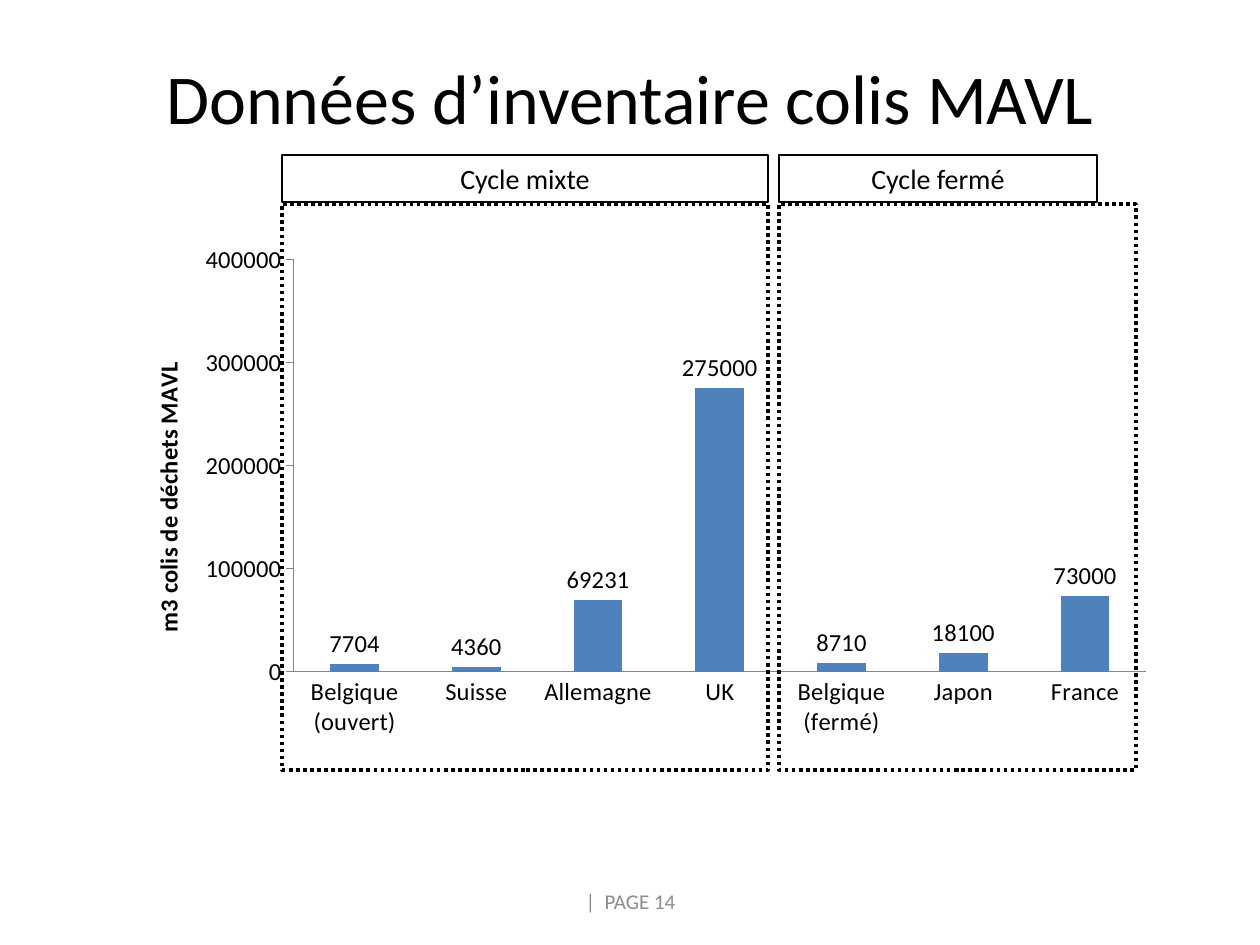
from dataclasses import dataclass

from lxml.etree import SubElement
from pptx import Presentation
from pptx.chart.data import CategoryChartData
from pptx.dml.color import RGBColor
from pptx.enum.chart import XL_CHART_TYPE as ChartType
from pptx.enum.chart import XL_LABEL_POSITION as LabelPosition
from pptx.enum.chart import XL_TICK_MARK as TickMark
from pptx.enum.dml import MSO_LINE_DASH_STYLE as Dash
from pptx.enum.shapes import MSO_SHAPE as Preset
from pptx.enum.text import MSO_ANCHOR as Anchor
from pptx.enum.text import PP_ALIGN as Align
from pptx.oxml.ns import qn
from pptx.util import Pt

PX_PER_INCH = 126
FONT = "Calibri"
BLACK = RGBColor(0x00, 0x00, 0x00)
GREY = RGBColor(0x8C, 0x8C, 0x8C)
AXIS_GREY = RGBColor(0x86, 0x86, 0x86)
BLUE = RGBColor(0x4F, 0x81, 0xBD)

VOLUMES = {
    "Belgique (ouvert)": 7704,
    "Suisse": 4360,
    "Allemagne": 69231,
    "UK": 275000,
    "Belgique (fermé)": 8710,
    "Japon": 18100,
    "France": 73000,
}


@dataclass
class Box:
    left: int
    top: int
    width: int
    height: int

    def emu(self) -> list[int]:
        return [px(n) for n in (self.left, self.top, self.width, self.height)]


@dataclass
class Cycle:
    name: str
    left: int
    header_width: int
    frame_width: int


CYCLES = [
    Cycle("Cycle mixte", 282, 486, 486),
    Cycle("Cycle fermé", 779, 318, 357),
]


def px(length: int) -> int:
    return round(length * 914400 / PX_PER_INCH)


def write(frame, text: str, size: int, color: RGBColor) -> None:
    frame.word_wrap = True
    frame.vertical_anchor = Anchor.MIDDLE
    para = frame.paragraphs[0]
    para.text = text
    para.alignment = Align.CENTER
    style(para.font, size, color)


def style(font, size: int, color: RGBColor) -> None:
    font.name = FONT
    font.size = Pt(size)
    font.color.rgb = color


def add_text(page, box: Box, text: str, size: int, color: RGBColor) -> None:
    write(page.shapes.add_textbox(*box.emu()).text_frame, text, size, color)


def add_outline(page, box: Box, width: float, dash: Dash = Dash.SOLID):
    outline = page.shapes.add_shape(Preset.RECTANGLE, *box.emu())
    outline.shadow.inherit = False
    outline.fill.background()
    outline.line.color.rgb = BLACK
    outline.line.width = Pt(width)
    outline.line.dash_style = dash
    return outline


def add_cycle(page, cycle: Cycle) -> None:
    header = add_outline(page, Box(cycle.left, 155, cycle.header_width, 47), 0.75)
    write(header.text_frame, cycle.name, 16, BLACK)
    add_outline(page, Box(cycle.left, 204, cycle.frame_width, 566), 2, Dash.ROUND_DOT)


def set_layout(parent, index: int, **settings) -> None:
    """Place a chart part by fractions of the chart's size."""
    for old in parent.findall(qn("c:layout")):
        parent.remove(old)
    layout = SubElement(parent, qn("c:layout"))
    parent.insert(index, layout)
    manual = SubElement(layout, qn("c:manualLayout"))
    for name, value in settings.items():
        SubElement(manual, qn(f"c:{name}")).set("val", str(value))


def add_volume_chart(page, box: Box) -> None:
    data = CategoryChartData()
    data.categories = list(VOLUMES)
    data.add_series("Series 1", list(VOLUMES.values()))
    chart = page.shapes.add_chart(ChartType.COLUMN_CLUSTERED, *box.emu(), data).chart
    chart.has_title = False
    chart.has_legend = False
    style(chart.font, 14, BLACK)

    plot = chart.plots[0]
    plot.gap_width = 150
    plot.vary_by_categories = False
    fill = plot.series[0].format.fill
    fill.solid()
    fill.fore_color.rgb = BLUE
    plot.has_data_labels = True
    plot.data_labels.show_value = True
    plot.data_labels.position = LabelPosition.OUTSIDE_END

    countries, volumes = chart.category_axis, chart.value_axis
    for axis in (countries, volumes):
        axis.has_major_gridlines = False
        axis.format.line.color.rgb = AXIS_GREY
        axis.format.line.width = Pt(0.75)
    countries.major_tick_mark = TickMark.NONE
    volumes.major_tick_mark = TickMark.OUTSIDE
    volumes.minimum_scale = 0
    volumes.maximum_scale = 400000
    volumes.major_unit = 100000

    title = volumes.axis_title
    para = title.text_frame.paragraphs[0]
    para.text = "m3 colis de déchets MAVL"
    style(para.font, 14, BLACK)
    para.font.bold = True
    body = next(title._element.iter(qn("a:bodyPr")))
    body.set("rot", "-5400000")
    body.set("vert", "horz")

    set_layout(title._element, 1, xMode="edge", yMode="edge", x=0.03, y=0.24)
    set_layout(
        next(chart._chartSpace.iter(qn("c:plotArea"))), 0,
        layoutTarget="inner", xMode="edge", yMode="edge",
        x=0.17, y=0.05, w=0.81, h=0.8,
    )


def main() -> None:
    deck = Presentation()
    deck.slide_width, deck.slide_height = px(1260), px(945)
    page = deck.slides.add_slide(deck.slide_layouts[6])
    add_text(page, Box(63, 38, 1134, 117), "Données d’inventaire colis MAVL", 40, BLACK)
    add_text(page, Box(431, 876, 399, 50), "|  PAGE 14", 12, GREY)
    add_volume_chart(page, Box(115, 234, 1052, 515))
    for cycle in CYCLES:
        add_cycle(page, cycle)
    deck.save("out.pptx")


if __name__ == "__main__":
    main()
